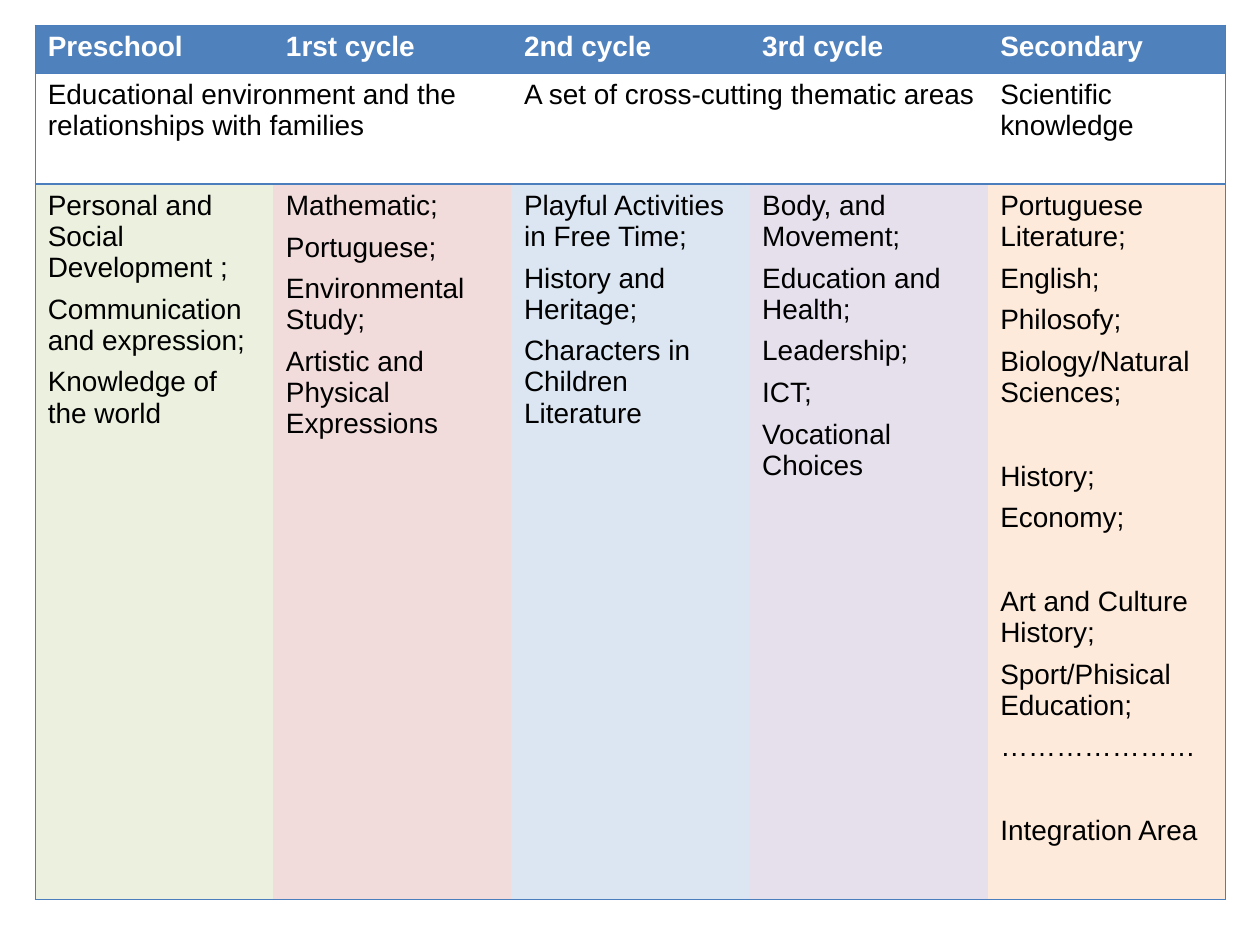
from lxml import etree
from pptx import Presentation, util as u
from pptx.dml.color import RGBColor
from pptx.oxml import ns

COLORS = {
    "header": "4F81BD", "border": "4B7EBC", "white": "FFFFFF", "black": "000000",
    "green": "EBF1DE", "red": "F2DCDB", "blue": "DCE6F2",
    "purple": "E6E0EC", "orange": "FDEADA",
}
NO_STYLE = "{2D5ABB26-0587-4C30-8999-92F81FD0307C}"
ROW_HEIGHTS = (0.38, 0.88, 5.68)
HEADINGS = ("Preschool", "1rst cycle", "2nd cycle", "3rd cycle", "Secondary")
THEMES = (
    (0, 1, "Educational environment and the relationships with families"),
    (2, 3, "A set of cross-cutting thematic areas"),
    (4, 4, "Scientific knowledge"),
)
SUBJECTS = (
    ("green", ("Personal and Social Development ;", "Communication and expression;",
               "Knowledge of the world")),
    ("red", ("Mathematic;", "Portuguese;", "Environmental Study;",
             "Artistic and Physical Expressions")),
    ("blue", ("Playful Activities in Free Time;", "History and Heritage;",
              "Characters in Children Literature")),
    ("purple", ("Body, and Movement;", "Education and Health;", "Leadership;", "ICT;",
                "Vocational Choices")),
    ("orange", ("Portuguese Literature;", "English;", "Philosofy;",
                "Biology/Natural Sciences;", "History;", "Economy;",
                "Art and Culture History;", "Sport/Phisical Education;",
                "…………………", "Integration Area")),
)
GROUP_STARTS = ("History;", "Art and Culture History;", "Integration Area")


def write_cell(cell, lines, color="black", bold=False, spacing=0):
    """Write one paragraph per line, with a wider gap before each new group."""
    for index, line in enumerate(lines):
        frame = cell.text_frame
        paragraph = frame.add_paragraph() if index else frame.paragraphs[0]
        paragraph.space_before = u.Pt(30 if line in GROUP_STARTS else spacing)
        run = paragraph.add_run()
        run.text = line
        run.font.name = "Arial"
        run.font.size = u.Pt(16)
        run.font.bold = bold
        run.font.color.rgb = RGBColor.from_string(COLORS[color])


def set_borders(cell, sides):
    """Draw a thin line on each of the given sides of a cell."""
    properties = cell._tc.get_or_add_tcPr()
    for side in sides:
        line = etree.SubElement(properties, ns.qn(f"a:ln{side}"), w=str(u.Pt(0.75)))
        fill = etree.SubElement(line, ns.qn("a:solidFill"))
        etree.SubElement(fill, ns.qn("a:srgbClr"), val=COLORS["border"])


def fill_cell(cell, color):
    """Fill a cell with a plain colour."""
    cell.fill.solid()
    cell.fill.fore_color.rgb = RGBColor.from_string(COLORS[color])


def add_curriculum(slide, left, top, width):
    """Place the curriculum table from its top left corner."""
    columns = len(HEADINGS)
    frame = slide.shapes.add_table(len(ROW_HEIGHTS), columns, left, top, width,
                                   u.Inches(sum(ROW_HEIGHTS)))
    table = frame.table
    table.first_row = table.horz_banding = False
    table._tbl.tblPr.find(ns.qn("a:tableStyleId")).text = NO_STYLE
    for row, height in zip(table.rows, ROW_HEIGHTS):
        row.height = u.Inches(height)
    for row in range(len(ROW_HEIGHTS)):
        for column in range(columns):
            sides = "L" * (column == 0) + "R" * (column == columns - 1)
            set_borders(table.cell(row, column), sides + ("T", "TB", "TB")[row])
    for column, heading in enumerate(HEADINGS):
        fill_cell(table.cell(0, column), "header")
        write_cell(table.cell(0, column), [heading], "white", True)
        table.cell(1, column).fill.background()
    for first, last, theme in THEMES:
        if last > first:
            table.cell(1, first).merge(table.cell(1, last))
        write_cell(table.cell(1, first), [theme])
    for column, (color, subjects) in enumerate(SUBJECTS):
        fill_cell(table.cell(2, column), color)
        write_cell(table.cell(2, column), subjects, spacing=6)


def main():
    """Build and save the presentation."""
    presentation = Presentation()
    presentation.slide_width, presentation.slide_height = u.Inches(10), u.Inches(7.5)
    slide = presentation.slides.add_slide(presentation.slide_layouts[6])
    add_curriculum(slide, u.Inches(0.28), u.Inches(0.2), u.Inches(9.45))
    presentation.save("out.pptx")


if __name__ == "__main__":
    main()
